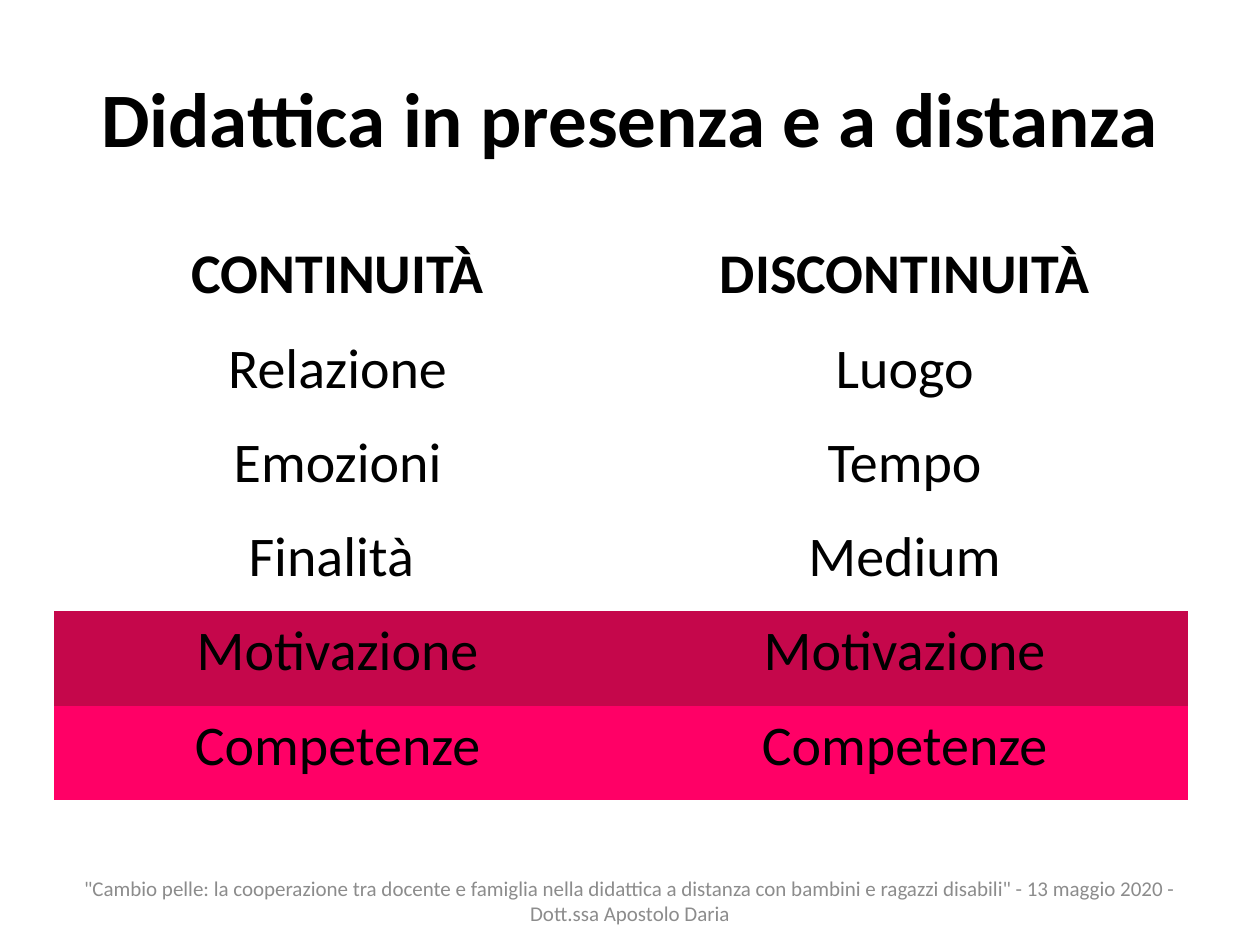
from pptx import Presentation
from pptx.dml.color import RGBColor
from pptx.enum.text import MSO_ANCHOR, PP_ALIGN
from pptx.oxml.ns import qn
from pptx.util import Inches, Pt

FONT = "Calibri"
BLACK = RGBColor(0x00, 0x00, 0x00)
GREY = RGBColor(0x8C, 0x8C, 0x8C)
CRIMSON = RGBColor(0xC5, 0x07, 0x4B)
PINK = RGBColor(0xFF, 0x00, 0x66)
NO_STYLE_NO_GRID = "{2D5ABB26-0587-4C30-8999-92F81FD0307C}"

TITLE = "Didattica in presenza e a distanza"
FOOTER = (
    '"Cambio pelle: la cooperazione tra docente e famiglia nella didattica a distanza '
    'con bambini e ragazzi disabili" - 13 maggio 2020 - Dott.ssa Apostolo Daria'
)
# Each row: left text, right text, fill
ROWS = [
    ("CONTINUITÀ", "DISCONTINUITÀ", None),
    ("Relazione", "Luogo", None),
    ("Emozioni", "Tempo", None),
    ("Finalità ", "Medium", None),
    ("Motivazione", "Motivazione", CRIMSON),
    ("Competenze", "Competenze", PINK),
]


def write_centred(frame, text, size, color=BLACK, bold=False):
    para = frame.paragraphs[0]
    para.alignment = PP_ALIGN.CENTER
    span = para.add_run()
    span.text = text
    span.font.name = FONT
    span.font.size = Pt(size)
    span.font.bold = bold
    span.font.color.rgb = color


def add_text(page, left, top, width, height, text, size, color=BLACK, bold=False):
    box = page.shapes.add_textbox(Inches(left), Inches(top), Inches(width), Inches(height))
    frame = box.text_frame
    frame.word_wrap = True
    frame.vertical_anchor = MSO_ANCHOR.MIDDLE
    write_centred(frame, text, size, color, bold)


def add_comparison(page, left, top, width, height):
    table = page.shapes.add_table(
        len(ROWS), 2, Inches(left), Inches(top), Inches(width), Inches(height)
    ).table
    table.horz_banding = False
    table._tbl.tblPr.find(qn("a:tableStyleId")).text = NO_STYLE_NO_GRID

    for row_index, (continuity, discontinuity, fill) in enumerate(ROWS):
        for column_index, text in enumerate((continuity, discontinuity)):
            cell = table.cell(row_index, column_index)
            if fill is None:
                cell.fill.background()
            else:
                cell.fill.solid()
                cell.fill.fore_color.rgb = fill
            write_centred(cell.text_frame, text, 32, bold=row_index == 0)


def main():
    deck = Presentation()
    deck.slide_width = Inches(10)
    deck.slide_height = Inches(7.5)
    page = deck.slides.add_slide(deck.slide_layouts[6])

    # Title
    add_text(page, 0.5, 0.3, 9, 1.25, TITLE, 44, bold=True)
    # Continuity and discontinuity table
    add_comparison(page, 0.43, 1.86, 9, 4.49)
    # Footer
    add_text(page, 0.51, 6.95, 8.98, 0.4, FOOTER, 12, color=GREY)

    deck.save("out.pptx")


if __name__ == "__main__":
    main()
